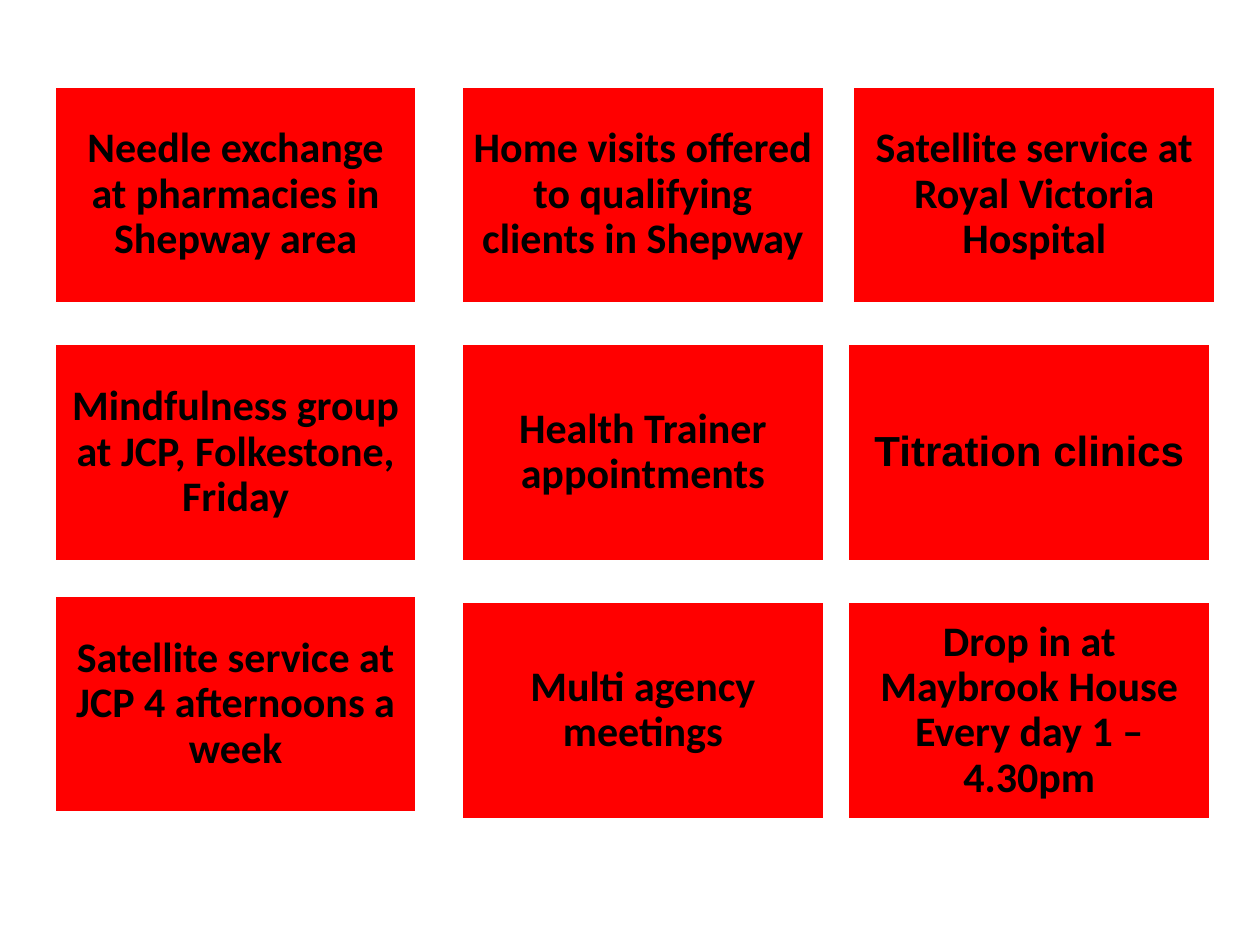
from pptx import Presentation, util as u
from pptx.dml.color import RGBColor
from pptx.enum import shapes, text

RED = RGBColor(0xFF, 0x00, 0x00)
WHITE = RGBColor(0xFF, 0xFF, 0xFF)
BLACK = RGBColor(0x00, 0x00, 0x00)

deck = Presentation()
deck.slide_width, deck.slide_height = u.Cm(25.4), u.Cm(19.05)
slide = deck.slides.add_slide(deck.slide_layouts[6])

# Services, row by row
rows = [
    ["Needle exchange at pharmacies in Shepway area",
     "Home visits offered to qualifying clients in Shepway",
     "Satellite service at Royal Victoria Hospital"],
    ["Mindfulness group at JCP, Folkestone, Friday",
     "Health Trainer appointments",
     "Titration clinics"],
    ["Satellite service at JCP 4 afternoons a week",
     "Multi agency meetings",
     "Drop in at Maybrook House Every day 1 – 4.30pm"],
]

# Grid, with two boxes nudged off it, keyed by (row, column)
lefts = [1.09, 9.3, 17.09]
top, step = 1.73, 5.2
wide, high = 7.32, 4.39
nudge = {(0, 2): (0.1, 0), (2, 0): (0, -0.13)}
fonts = {(1, 2): "Arial"}

for row, names in enumerate(rows):
    for col, name in enumerate(names):
        dx, dy = nudge.get((row, col), (0, 0))
        box = slide.shapes.add_shape(
            shapes.MSO_SHAPE.RECTANGLE,
            u.Cm(lefts[col] + dx), u.Cm(top + row * step + dy),
            u.Cm(wide), u.Cm(high))
        box.shadow.inherit = False
        box.fill.solid()
        box.fill.fore_color.rgb = RED
        box.line.color.rgb = WHITE
        box.line.width = u.Pt(2)

        # Label
        frame = box.text_frame
        frame.word_wrap = True
        frame.vertical_anchor = text.MSO_ANCHOR.MIDDLE
        frame.margin_left = frame.margin_right = u.Cm(0.25)
        frame.margin_top = frame.margin_bottom = u.Cm(0.25)
        para = frame.paragraphs[0]
        para.alignment = text.PP_ALIGN.CENTER
        para.line_spacing = 0.9
        run = para.add_run()
        run.text = name
        run.font.name = fonts.get((row, col), "Calibri")
        run.font.size = u.Pt(24)
        run.font.bold = True
        run.font.color.rgb = BLACK

deck.save("out.pptx")
